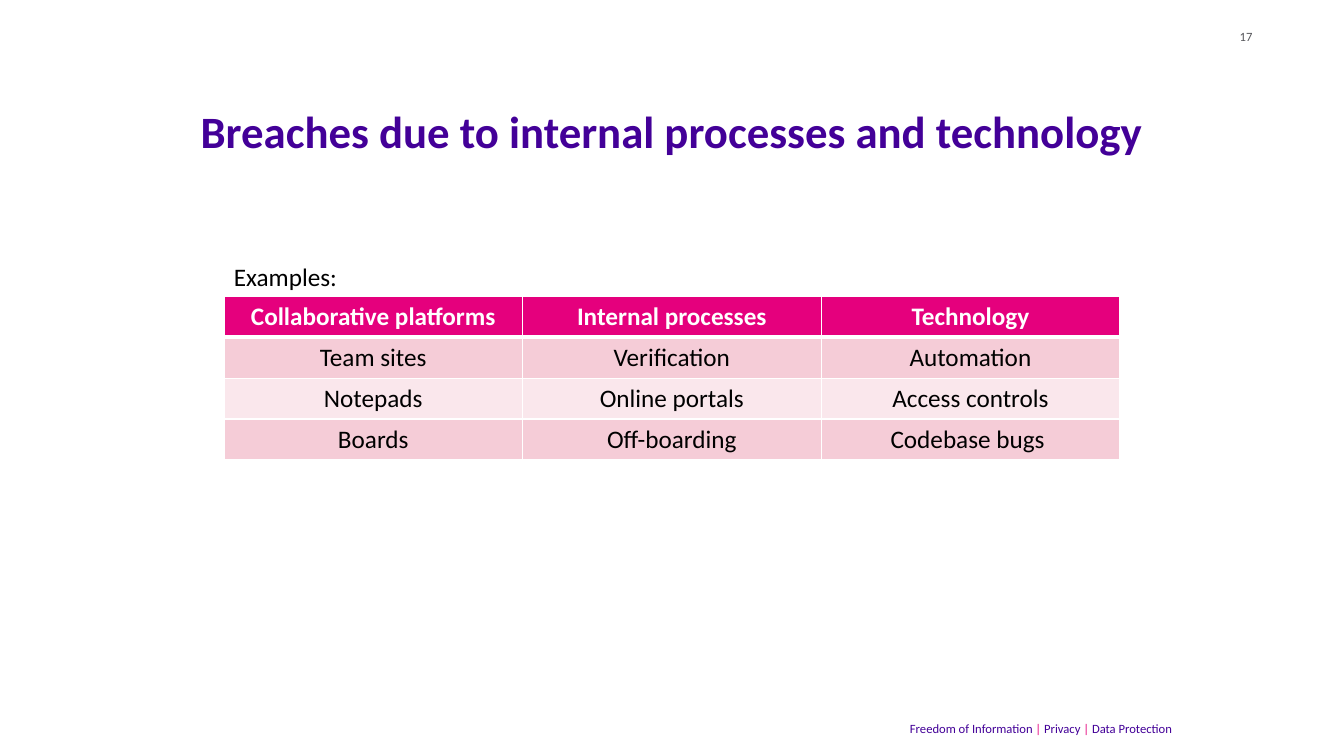
from dataclasses import dataclass

from lxml.etree import SubElement
from pptx import Presentation
from pptx.dml.color import RGBColor
from pptx.enum.text import PP_ALIGN
from pptx.oxml.ns import qn
from pptx.util import Pt


@dataclass(frozen=True)
class Theme:
    font: str = "Calibri"
    purple: str = "430098"
    pink: str = "E5007D"
    grey: str = "55565A"
    black: str = "000000"
    white: str = "FFFFFF"
    band_dark: str = "F5CCD7"
    band_light: str = "FAE7EC"
    title_size: float = 32
    body_size: float = 18
    small_size: float = 9
    thin_line: float = 1
    header_line: float = 3


THEME = Theme()

EXAMPLES = [
    ["Collaborative platforms", "Internal processes", "Technology"],
    ["Team sites", "Verification", "Automation"],
    ["Notepads", "Online portals", "Access controls"],
    ["Boards", "Off-boarding", "Codebase bugs "],
]


def style_span(span, size, color, bold=False):
    span.font.name = THEME.font
    span.font.size = Pt(size)
    span.font.bold = bold
    span.font.color.rgb = RGBColor.from_string(color)


def add_text(slide, place, pieces, size, bold=False, align=PP_ALIGN.LEFT,
             side_margin=7.2, wrap=True):
    """Add a one-paragraph text box; pieces are (text, color) pairs."""
    box = slide.shapes.add_textbox(*(Pt(length) for length in place))
    frame = box.text_frame
    frame.word_wrap = wrap
    frame.margin_left = frame.margin_right = Pt(side_margin)
    para = frame.paragraphs[0]
    para.alignment = align
    for text, color in pieces:
        span = para.add_run()
        span.text = text
        style_span(span, size, color, bold)


def add_cell_borders(cell, top, bottom):
    """Draw white borders; must come before the cell's fill is set."""
    properties = cell._tc.get_or_add_tcPr()
    widths = {"a:lnL": THEME.thin_line, "a:lnR": THEME.thin_line,
              "a:lnT": top, "a:lnB": bottom}
    for tag, width in widths.items():
        line = SubElement(properties, qn(tag), w=str(Pt(width)))
        fill = SubElement(line, qn("a:solidFill"))
        SubElement(fill, qn("a:srgbClr"), val=THEME.white)


def fill_cell(cell, text, row):
    is_header = row == 0
    add_cell_borders(
        cell,
        top=THEME.header_line if row == 1 else THEME.thin_line,
        bottom=THEME.header_line if is_header else THEME.thin_line,
    )
    band = THEME.band_dark if row % 2 else THEME.band_light
    cell.fill.solid()
    cell.fill.fore_color.rgb = RGBColor.from_string(THEME.pink if is_header else band)
    para = cell.text_frame.paragraphs[0]
    para.text = text
    para.alignment = PP_ALIGN.CENTER
    style_span(para.runs[0], THEME.body_size,
               THEME.white if is_header else THEME.black, bold=is_header)


def add_examples_table(slide, left, top, column_width, row_height, rows):
    row_count, column_count = len(rows), len(rows[0])
    table = slide.shapes.add_table(
        row_count, column_count, Pt(left), Pt(top),
        Pt(column_width * column_count), Pt(row_height * row_count),
    ).table
    for column in table.columns:
        column.width = Pt(column_width)
    for row, texts in enumerate(rows):
        table.rows[row].height = Pt(row_height)
        for column, text in enumerate(texts):
            fill_cell(table.cell(row, column), text, row)


def main():
    deck = Presentation()
    deck.slide_width, deck.slide_height = Pt(960), Pt(540)
    page = deck.slides.add_slide(deck.slide_layouts[6])

    footer = [
        ("Freedom of Information ", THEME.purple), ("|", THEME.pink),
        (" Privacy ", THEME.purple), ("| ", THEME.pink),
        ("Data Protection", THEME.purple),
    ]
    add_text(page, (650, 511.2, 257, 18), footer, THEME.small_size, side_margin=0)
    add_text(page, (878.4, 17.3, 25.2, 18), [("17", THEME.grey)],
             THEME.small_size, wrap=False)
    add_text(page, (123, 70.6, 714, 44),
             [("Breaches due to internal processes and technology", THEME.purple)],
             THEME.title_size, bold=True, align=PP_ALIGN.CENTER, side_margin=0)
    add_examples_table(page, 160, 211.7, 213.3, 29.2, EXAMPLES)
    add_text(page, (160, 182.9, 89.3, 28.8), [("Examples:", THEME.black)],
             THEME.body_size, wrap=False)
    deck.save("out.pptx")


if __name__ == "__main__":
    main()
